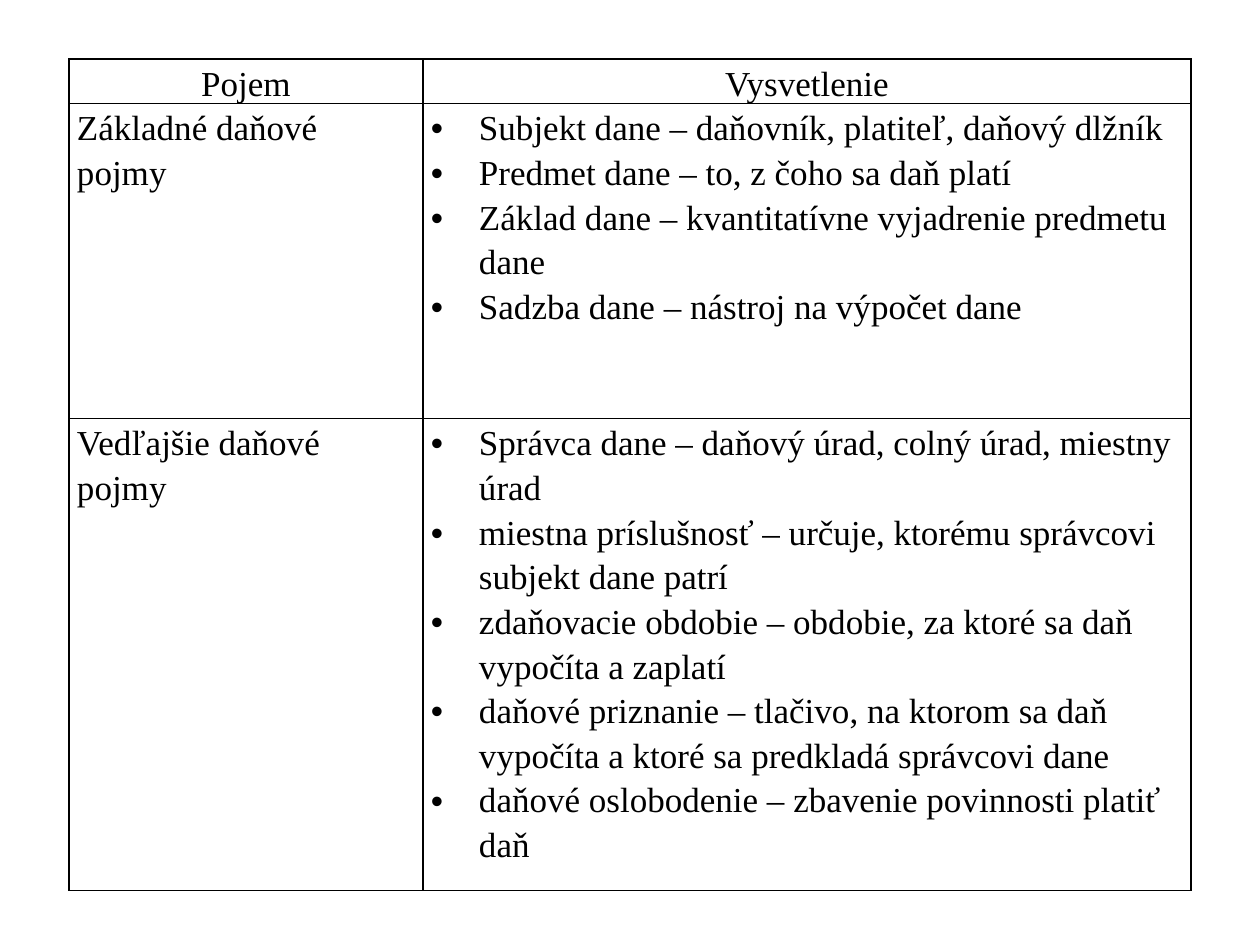
from lxml.etree import SubElement
from pptx import Presentation
from pptx.dml.color import RGBColor
from pptx.enum.text import PP_ALIGN
from pptx.oxml.ns import qn
from pptx.util import Emu, Pt

BLACK = RGBColor(0, 0, 0)
FONT = "Times New Roman"
SIZE = 20
COLS = [354, 768]
ROWS = [
    (39, "Pojem", ["Vysvetlenie"]),
    (315, "Základné daňové pojmy", [
        "Subjekt dane – daňovník, platiteľ, daňový dlžník",
        "Predmet dane – to, z čoho sa daň platí",
        "Základ dane – kvantitatívne vyjadrenie predmetu dane",
        "Sadzba dane – nástroj na výpočet dane",
    ]),
    (472, "Vedľajšie daňové pojmy", [
        "Správca dane – daňový úrad, colný úrad, miestny úrad",
        "miestna príslušnosť – určuje, ktorému správcovi subjekt dane patrí",
        "zdaňovacie obdobie – obdobie, za ktoré sa daň vypočíta a zaplatí",
        "daňové priznanie – tlačivo, na ktorom sa daň vypočíta a ktoré sa predkladá správcovi dane",
        "daňové oslobodenie – zbavenie povinnosti platiť daň",
    ]),
]


def px(n):
    return Emu(round(n * 914400 / 126))


def frame(cell):
    props = cell._tc.get_or_add_tcPr()
    for side in ("lnL", "lnR", "lnT", "lnB"):
        line = SubElement(props, qn("a:" + side), w=str(Pt(1)))
        fill = SubElement(line, qn("a:solidFill"))
        SubElement(fill, qn("a:srgbClr"), val=str(BLACK))
    cell.fill.background()
    cell.margin_left = cell.margin_right = px(8)
    cell.margin_top = cell.margin_bottom = 0


def bullet(para):
    props = para._p.get_or_add_pPr()
    props.set("marL", str(px(48)))
    props.set("indent", str(-px(48)))
    SubElement(props, qn("a:buFont"), typeface="Arial")
    SubElement(props, qn("a:buChar"), char="•")


def write(cell, texts, head, dots):
    frame(cell)
    body = cell.text_frame
    for i, text in enumerate(texts):
        para = body.add_paragraph() if i else body.paragraphs[0]
        para.alignment = PP_ALIGN.CENTER if head else PP_ALIGN.LEFT
        para.line_spacing = 1.15
        if dots:
            bullet(para)
        run = para.add_run()
        run.text = text
        run.font.name = FONT
        run.font.size = Pt(SIZE)
        run.font.color.rgb = BLACK


def main():
    deck = Presentation()
    deck.slide_width, deck.slide_height = px(1260), px(945)
    slide = deck.slides.add_slide(deck.slide_layouts[6])
    high = sum(row[0] for row in ROWS)
    grid = slide.shapes.add_table(
        len(ROWS), len(COLS), px(69), px(59), px(sum(COLS)), px(high)).table
    grid.first_row = grid.horz_banding = False
    for col, wide in zip(grid.columns, COLS):
        col.width = px(wide)
    for r, (tall, term, notes) in enumerate(ROWS):
        grid.rows[r].height = px(tall)
        write(grid.cell(r, 0), [term], r == 0, False)
        write(grid.cell(r, 1), notes, r == 0, r > 0)
    deck.save("out.pptx")


if __name__ == "__main__":
    main()
